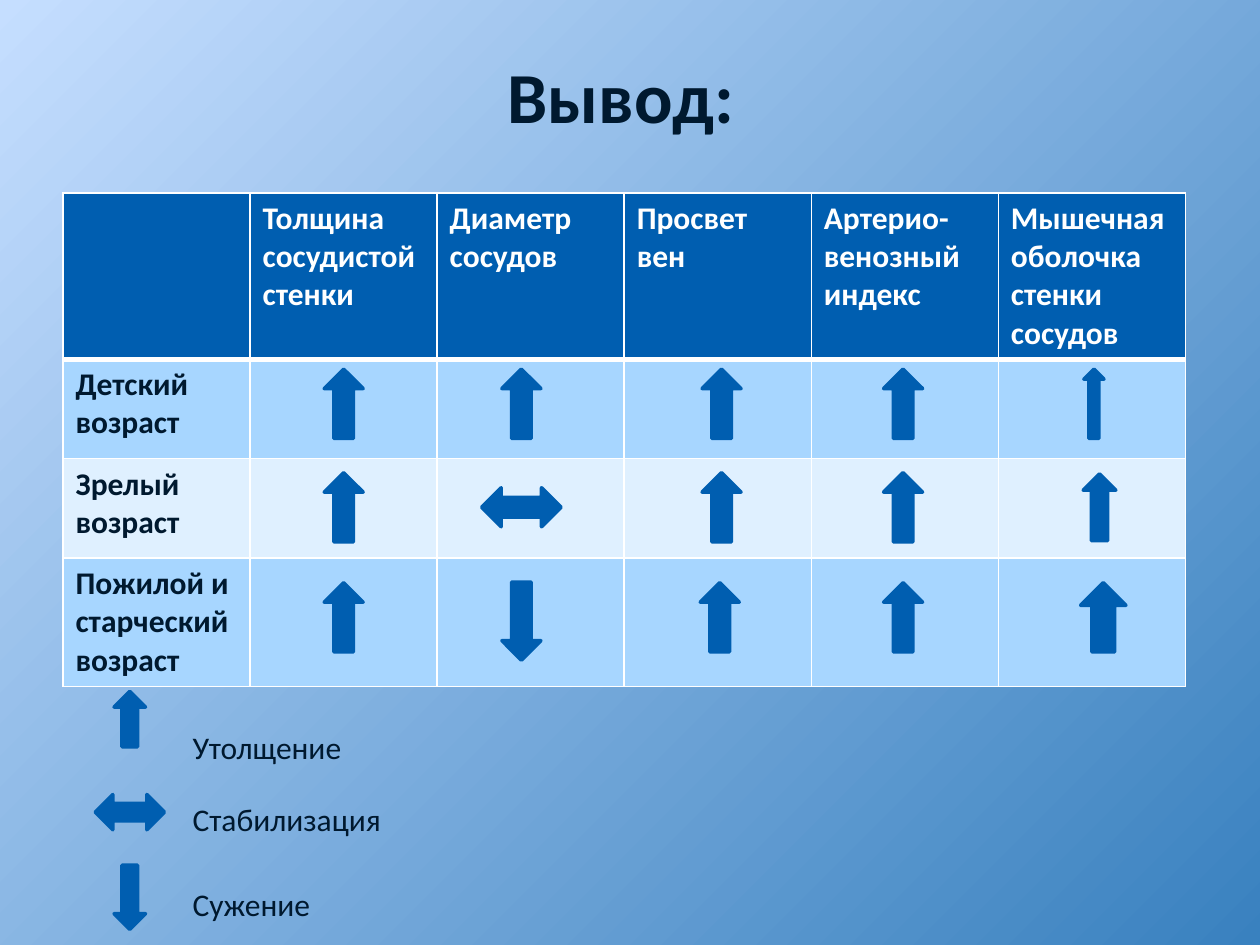
from lxml import etree
from pptx import Presentation
from pptx import util as u
from pptx.dml.color import RGBColor
from pptx.enum import shapes, text
from pptx.oxml import ns

BLUE = RGBColor(0x00, 0x5E, 0xB0)
INK = RGBColor(0x00, 0x19, 0x2F)
WHITE = RGBColor(0xFF, 0xFF, 0xFF)
BAND = RGBColor(0xA7, 0xD6, 0xFF)
PALE = RGBColor(0xDF, 0xF0, 0xFF)
SKY = RGBColor(0xC5, 0xDE, 0xFF)
DEEP = RGBColor(0x39, 0x81, 0xBF)

FONT = "Calibri"
WIDE, HIGH = 10, 7.5
UP = shapes.MSO_SHAPE.UP_ARROW
DOWN = shapes.MSO_SHAPE.DOWN_ARROW
BOTH = shapes.MSO_SHAPE.LEFT_RIGHT_ARROW

HEADS = ["", "Толщина сосудистой стенки", "Диаметр сосудов", "Просвет вен",
         "Артерио-венозный индекс", "Мышечная оболочка стенки сосудов"]
AGES = ["Детский возраст", "Зрелый возраст", "Пожилой и старческий возраст"]
ROWS = [1.31, 0.79, 0.79, 1.02]

# Arrows by age: kind, centre in columns, width and height in inches
STD = (0.31, 0.55)
SIGNS = [
    [(UP, 1.5, *STD), (UP, 2.45, *STD), (UP, 3.52, *STD),
     (UP, 4.49, *STD), (UP, 5.51, 0.16, 0.55)],
    [(UP, 1.5, *STD), (BOTH, 2.45, 0.63, 0.31), (UP, 3.52, *STD),
     (UP, 4.49, *STD), (UP, 5.54, 0.26, 0.53)],
    [(UP, 1.5, *STD), (DOWN, 2.45, 0.31, 0.62), (UP, 3.51, *STD),
     (UP, 4.49, *STD), (UP, 5.56, 0.36, 0.55)],
]
MIDS = [4.03 / 1.26 , 4.03, 4.9]

# Legend: kind, arrow size, arrow middle, label, label width, label top
KEYS = [
    (UP, 0.25, 0.44, 0.15, "Утолщение", 1.45, 0.16),
    (BOTH, 0.55, 0.28, 0.51, "Стабилизация", 1.77, 0.44),
    (DOWN, 0.25, 0.51, 0.84, "Сужение", 1.2, 0.77),
]


def put(para, words, size, color, bold=False):
    run = para.add_run()
    run.text = words
    font = run.font
    font.name, font.size, font.bold = FONT, u.Pt(size), bold
    font.color.rgb = color


def arrow(slide, kind, x, y, w, h):
    """Draw an arrow centred on x, y."""
    mark = slide.shapes.add_shape(kind, *map(u.Inches, (x - w / 2, y - h / 2, w, h)))
    mark.shadow.inherit = False
    mark.fill.solid()
    mark.fill.fore_color.rgb = BLUE
    mark.line.color.rgb = BLUE
    mark.line.width = u.Pt(2)


def edge(cell, low):
    """Give a cell white borders; low is the bottom width in points."""
    props = cell._tc.get_or_add_tcPr()
    for i, (side, width) in enumerate(zip("LRTB", (1, 1, 1, low))):
        line = etree.Element(ns.qn(f"a:ln{side}"), w=str(u.Pt(width)))
        fill = etree.SubElement(line, ns.qn("a:solidFill"))
        etree.SubElement(fill, ns.qn("a:srgbClr"), val=str(WHITE))
        props.insert(i, line)


def backdrop(slide):
    fill = slide.background.fill
    fill.gradient()
    fill.gradient_angle = 315
    for stop, color in zip(fill.gradient_stops, (SKY, DEEP)):
        stop.color.rgb = color


def heading(slide, box):
    title = slide.shapes.title
    title.left, title.top, title.width, title.height = map(u.Inches, box)
    frame = title.text_frame
    frame.vertical_anchor = text.MSO_ANCHOR.MIDDLE
    para = frame.paragraphs[0]
    para.alignment = text.PP_ALIGN.CENTER
    put(para, "Вывод:", 41, INK, True)


def grid(slide, box):
    left, top, width, height = box
    col = width / len(HEADS)
    table = slide.shapes.add_table(len(ROWS), len(HEADS), *map(u.Inches, box)).table
    for part in table.columns:
        part.width = u.Inches(col)
    for part, size in zip(table.rows, ROWS):
        part.height = u.Inches(size)

    # Cells: dark header, then alternating bands
    data = [HEADS] + [[age] + [""] * (len(HEADS) - 1) for age in AGES]
    for r, line in enumerate(data):
        for c, words in enumerate(line):
            cell = table.cell(r, c)
            cell.fill.solid()
            cell.fill.fore_color.rgb = (BLUE, BAND, PALE, BAND)[r]
            edge(cell, 1 if r else 3)
            if words:
                put(cell.text_frame.paragraphs[0], words, 18, INK if r else WHITE, True)

    # Arrows: one level for each age row
    for r, signs in enumerate(SIGNS):
        mid = top + sum(ROWS[:r + 1]) + (0.36, 0.4, 0.47)[r] * ROWS[r + 1]
        mid += (0.08, 0.08, 0)[r]
        for kind, place, w, h in signs:
            drop = 0.03 if kind == DOWN else 0
            arrow(slide, kind, left + place * col, mid + drop, w, h)


def legend(slide, box):
    left, top, width, height = box
    for kind, w, h, mid, words, span, place in KEYS:
        arrow(slide, kind, left + 0.28, top + mid * height, w, h)
        label = slide.shapes.add_textbox(*map(
            u.Inches, (left + 0.68, top + place * height, span, 0.4)))
        frame = label.text_frame
        frame.word_wrap = False
        frame.auto_size = text.MSO_AUTO_SIZE.SHAPE_TO_FIT_TEXT
        put(frame.paragraphs[0], words, 18, INK)


def main():
    deck = Presentation()
    deck.slide_width, deck.slide_height = u.Inches(WIDE), u.Inches(HIGH)
    slide = deck.slides.add_slide(deck.slide_layouts[5])
    backdrop(slide)
    heading(slide, (0.43, 0.13, 0.9 * WIDE, HIGH / 6))
    grid(slide, (0.5, 1.53, 8.91, sum(ROWS)))
    legend(slide, (0.75, 5.4, 2.5, 2.05))
    deck.save("out.pptx")


if __name__ == "__main__":
    main()
